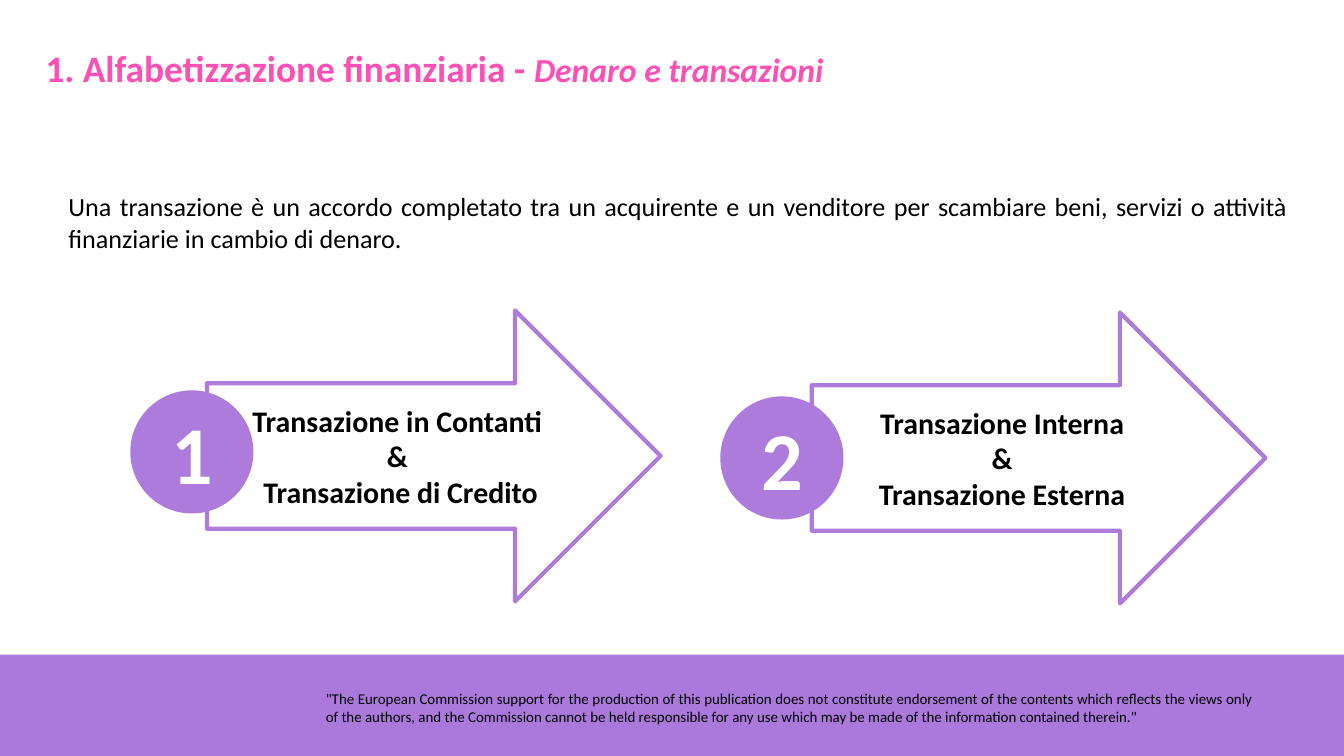
from pptx import Presentation
from pptx.dml.color import RGBColor
from pptx.enum.shapes import MSO_SHAPE
from pptx.enum.text import MSO_ANCHOR, PP_ALIGN
from pptx.util import Pt

PX = 9144  # EMU per px, 100 px to the inch
WIDE, HIGH = 2000, 1125
ARROW, OVAL, RECT = MSO_SHAPE.RIGHT_ARROW, MSO_SHAPE.OVAL, MSO_SHAPE.RECTANGLE
LEFT, MID, JUST = PP_ALIGN.LEFT, PP_ALIGN.CENTER, PP_ALIGN.JUSTIFY
FONT = "Calibri"
LILAC, BAND, PINK, BLACK, WHITE = "AC7BDC", "AB79DB", "FD4FB4", "000000", "FFFFFF"

# Content: a paragraph is a list of runs (text, size, bold, italic)
TITLE = [("1. Alfabetizzazione finanziaria - ", 40, True, False),
         ("Denaro e transazioni", 36, True, True)]
INTRO = [("Una transazione è un accordo completato tra un acquirente e un venditore "
          "per scambiare beni, servizi o attività finanziarie in cambio di denaro.",
          28, False, False)]
NOTE = [('"The European Commission support for the production of this publication '
         "does not constitute endorsement of the contents which reflects the views "
         "only of the authors, and the Commission cannot be held responsible for any "
         'use which may be made of the information contained therein."',
         16, False, False)]
# Arrow left and top, circle left and top, lines
STEPS = [
    ((308, 462), (197, 584),
     ["Transazione in Contanti", "&", " Transazione di Credito"]),
    ((1208, 465), (1075, 593),
     ["Transazione Interna", "&", "Transazione Esterna"]),
]
ARROW_SIZE, DISC_SIZE = (675, 433), (177, 177)


def rgb(code):
    return RGBColor.from_string(code)


def write(frame, paras, color, align):
    frame.word_wrap = True
    for i, runs in enumerate(paras):
        para = frame.paragraphs[0] if i == 0 else frame.add_paragraph()
        para.alignment = align
        for text, size, bold, italic in runs:
            run = para.add_run()
            run.text = text
            font = run.font
            font.name, font.size = FONT, Pt(size)
            font.bold, font.italic = bold, italic
            font.color.rgb = rgb(color)


def add_text(slide, box, runs, color, align):
    frame = slide.shapes.add_textbox(*(n * PX for n in box)).text_frame
    write(frame, [runs], color, align)
    return frame


def add_form(slide, kind, box, fill=None, line=None):
    shape = slide.shapes.add_shape(kind, *(n * PX for n in box))
    shape.shadow.inherit = False
    if fill:
        shape.fill.solid()
        shape.fill.fore_color.rgb = rgb(fill)
    else:
        shape.fill.background()
    if line:
        shape.line.color.rgb = rgb(line)
        shape.line.width = Pt(4.5)
    else:
        shape.line.fill.background()
    shape.text_frame.vertical_anchor = MSO_ANCHOR.MIDDLE
    return shape


def main():
    prs = Presentation()
    prs.slide_width, prs.slide_height = WIDE * PX, HIGH * PX
    slide = prs.slides.add_slide(prs.slide_layouts[6])

    # Footer band and disclaimer
    add_form(slide, RECT, (0, 974, WIDE, HIGH - 974), BAND)
    note = add_text(slide, (475, 1021, 1400, 55), NOTE, BLACK, JUST)
    note.paragraphs[0].line_spacing = 1.01

    # Title and introduction
    add_text(slide, (58, 62, 1367, 77), TITLE, PINK, LEFT)
    add_text(slide, (92, 279, 1833, 104), INTRO, BLACK, JUST)

    # Numbered arrows
    for num, (spot, disc, lines) in enumerate(STEPS, 1):
        arrow = add_form(slide, ARROW, spot + ARROW_SIZE, line=LILAC)
        write(arrow.text_frame, [[(text, 32, True, False)] for text in lines],
              BLACK, MID)
        badge = add_form(slide, OVAL, disc + DISC_SIZE, LILAC, LILAC)
        write(badge.text_frame, [[(str(num), 88, True, False)]], WHITE, MID)

    prs.save("out.pptx")


if __name__ == "__main__":
    main()
